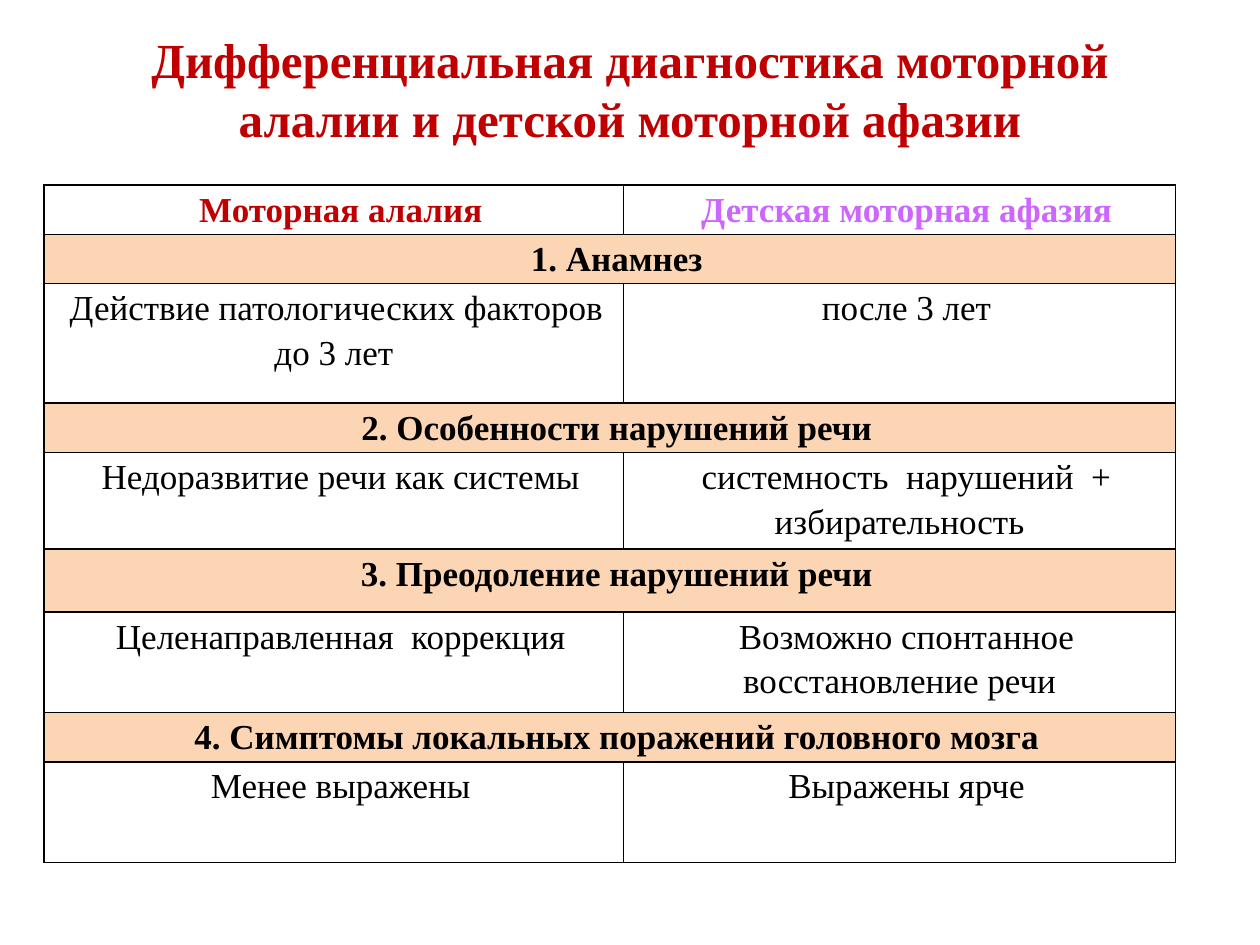
from lxml.etree import SubElement
from pptx import Presentation
from pptx.dml.color import RGBColor
from pptx.enum.text import MSO_ANCHOR, PP_ALIGN
from pptx.oxml.ns import qn
from pptx.util import Inches, Pt

FONT = "Times New Roman"
RED = RGBColor(0xC0, 0x00, 0x00)
VIOLET = RGBColor(0xCC, 0x66, 0xFF)
BLACK = RGBColor(0x00, 0x00, 0x00)
PEACH = RGBColor(0xFC, 0xD5, 0xB5)

TITLE = "Дифференциальная диагностика моторной алалии и детской моторной афазии"
HEADERS = [("Моторная алалия", RED), ("Детская моторная афазия", VIOLET)]
# Section heading, heading height, (alalia, aphasia), comparison height
SECTIONS = [
    ("1. Анамнез", 0.39,
     ("Действие патологических факторов  до 3 лет", "после 3 лет"), 0.95),
    ("2. Особенности нарушений речи", 0.39,
     ("Недоразвитие речи как системы",
      "системность  нарушений  + избирательность"), 0.73),
    ("3. Преодоление нарушений речи", 0.5,
     ("Целенаправленная  коррекция",
      "Возможно спонтанное восстановление речи"), 0.8),
    ("4. Симптомы локальных поражений головного мозга", 0.39,
     ("Менее выражены", "Выражены ярче"), 0.8),
]
HEADER_HEIGHT = 0.39
COLUMN_WIDTHS = [4.6, 4.38]


def format_paragraph(paragraph, size, color, bold):
    paragraph.alignment = PP_ALIGN.CENTER
    for run in paragraph.runs:
        run.font.name = FONT
        run.font.size = Pt(size)
        run.font.bold = bold
        run.font.color.rgb = color


def add_borders(cell):
    properties = cell._tc.get_or_add_tcPr()
    for position, side in enumerate(("lnL", "lnR", "lnT", "lnB")):
        line = properties.makeelement(qn(f"a:{side}"), {"w": str(Pt(1))})
        fill = SubElement(line, qn("a:solidFill"))
        SubElement(fill, qn("a:srgbClr"), val=str(BLACK))
        properties.insert(position, line)


def fill_cell(cell, text, color=BLACK, bold=False):
    cell.margin_left = cell.margin_right = Inches(0.07)
    cell.margin_top = cell.margin_bottom = 0
    cell.text_frame.text = text
    paragraph = cell.text_frame.paragraphs[0]
    paragraph.line_spacing = 1.15
    paragraph.space_before = Pt(6)
    format_paragraph(paragraph, 20, color, bold)
    properties = paragraph._p.get_or_add_pPr()
    properties.set("marL", "0")
    properties.set("indent", str(Inches(0.11)))


def add_title(slide):
    title = slide.shapes.add_textbox(Inches(0.5), Inches(0.3), Inches(9), Inches(1.25))
    frame = title.text_frame
    frame.word_wrap = True
    frame.vertical_anchor = MSO_ANCHOR.MIDDLE
    frame.margin_bottom = Inches(0.5)
    frame.text = TITLE
    format_paragraph(frame.paragraphs[0], 28, RED, True)


def add_comparison_table(slide):
    heights = [HEADER_HEIGHT]
    for _, heading_height, _, comparison_height in SECTIONS:
        heights += [heading_height, comparison_height]
    table = slide.shapes.add_table(
        len(heights), len(COLUMN_WIDTHS), Inches(0.35), Inches(1.47),
        Inches(sum(COLUMN_WIDTHS)), Inches(sum(heights))).table
    table.first_row = table.horz_banding = False
    for column, width in zip(table.columns, COLUMN_WIDTHS):
        column.width = Inches(width)
    for row, height in zip(table.rows, heights):
        row.height = Inches(height)
    for cell in table.iter_cells():
        cell.fill.background()
        add_borders(cell)

    for column, (text, color) in enumerate(HEADERS):
        fill_cell(table.cell(0, column), text, color, bold=True)
    for index, (heading, _, comparison, _) in enumerate(SECTIONS):
        row = 1 + 2 * index
        heading_cell = table.cell(row, 0)
        heading_cell.merge(table.cell(row, 1))
        heading_cell.fill.solid()
        heading_cell.fill.fore_color.rgb = PEACH
        fill_cell(heading_cell, heading, bold=True)
        for column, text in enumerate(comparison):
            fill_cell(table.cell(row + 1, column), text)


def main():
    presentation = Presentation()
    presentation.slide_width = Inches(10)
    presentation.slide_height = Inches(7.5)
    slide = presentation.slides.add_slide(presentation.slide_layouts[6])
    add_title(slide)
    add_comparison_table(slide)
    presentation.save("out.pptx")


if __name__ == "__main__":
    main()
